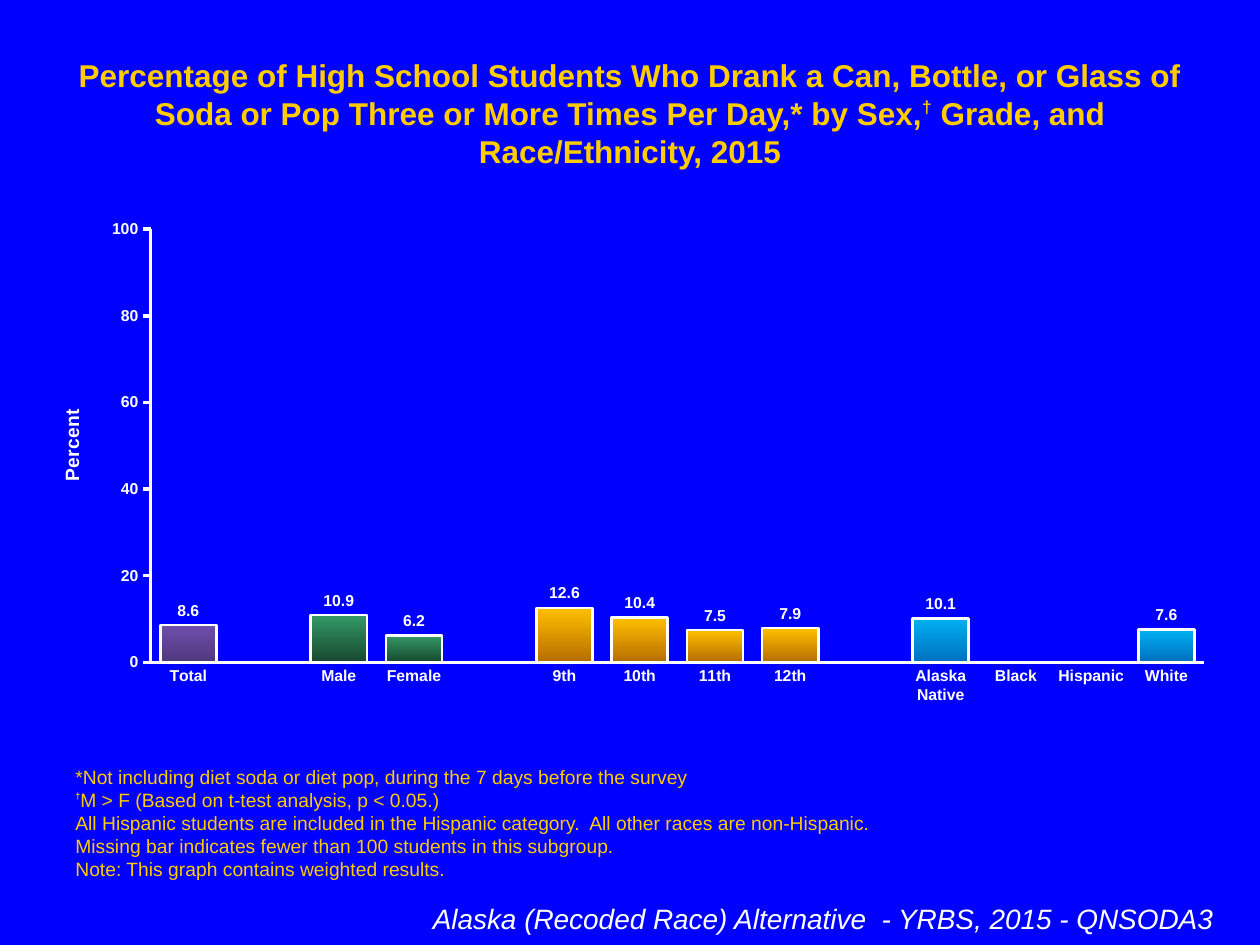
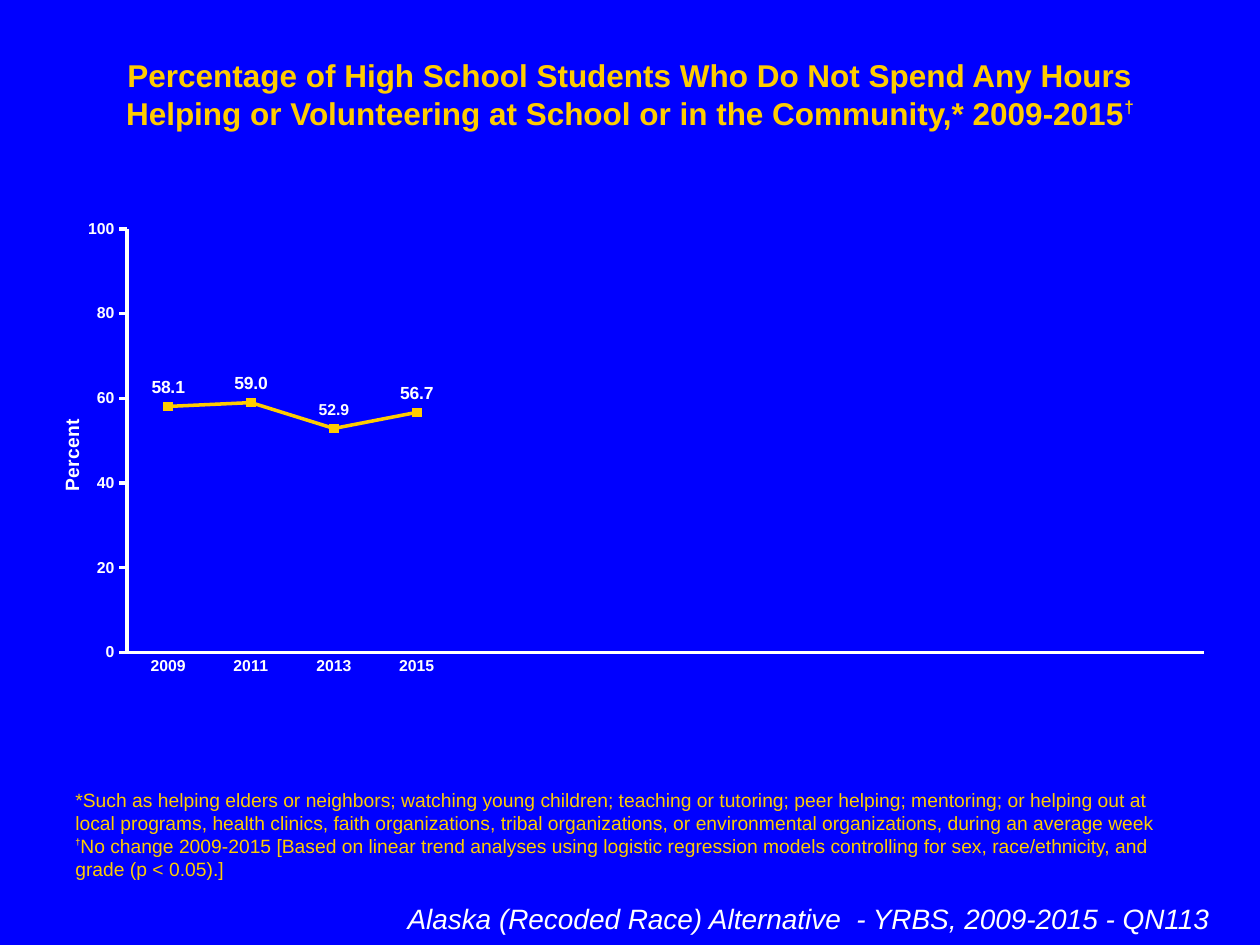
import pptx
import pptx.chart.data
import pptx.dml.color
import pptx.enum.chart
import pptx.enum.text
import pptx.oxml
import pptx.oxml.ns
import pptx.util

PX = 914400 / 126
FONT = "Arial"
BLUE, GOLD, WHITE = "0000FF", "FFCC00", "FFFFFF"
DAGGER = "†"

Align = pptx.enum.text.PP_ALIGN
Anchor = pptx.enum.text.MSO_ANCHOR
ChartType = pptx.enum.chart.XL_CHART_TYPE
Tick = pptx.enum.chart.XL_TICK_MARK
LabelPosition = pptx.enum.chart.XL_LABEL_POSITION


def px(length):
    return pptx.util.Emu(round(length * PX))


def color(value):
    return pptx.dml.color.RGBColor.from_string(value)


def set_font(font, size, fill, bold=False, italic=False):
    font.name = FONT
    font.size = pptx.util.Pt(size)
    font.bold = bold
    font.italic = italic
    font.color.rgb = color(fill)


def set_line(line, fill, width=2):
    line.color.rgb = color(fill)
    line.width = pptx.util.Pt(width)


def set_layout(parent, index, **fractions):
    """Place a chart part by fractions of the chart's size."""
    old = parent.find(pptx.oxml.ns.qn("c:layout"))
    if old is not None:
        parent.remove(old)
    inner = '<c:layoutTarget val="inner"/>' if "w" in fractions else ""
    modes = "".join(f'<c:{key}Mode val="edge"/>' for key in "xy")
    values = "".join(f'<c:{key} val="{value}"/>' for key, value in fractions.items())
    parent.insert(index, pptx.oxml.parse_xml(
        f'<c:layout {pptx.oxml.ns.nsdecls("c")}><c:manualLayout>'
        f"{inner}{modes}{values}</c:manualLayout></c:layout>"))


class SurveyDeck:
    def __init__(self):
        self.deck = pptx.Presentation()
        self.deck.slide_width, self.deck.slide_height = px(1260), px(945)
        self.page = None

    def new_page(self):
        self.page = self.deck.slides.add_slide(self.deck.slide_layouts[6])
        self.page.background.fill.solid()
        self.page.background.fill.fore_color.rgb = color(BLUE)

    def text(self, place, lines, size, fill, align=Align.LEFT, anchor=Anchor.TOP,
             bold=False, italic=False, dagger=(9, 50)):
        box = self.page.shapes.add_textbox(*map(px, place))
        frame = box.text_frame
        frame.word_wrap = True
        frame.auto_size = pptx.enum.text.MSO_AUTO_SIZE.SHAPE_TO_FIT_TEXT
        frame.vertical_anchor = anchor
        for number, line in enumerate(lines):
            para = frame.add_paragraph() if number else frame.paragraphs[0]
            para.alignment = align
            set_font(para.font, size, fill, bold, italic)
            for part in filter(None, line.partition(DAGGER)):
                span = para.add_run()
                span.text = part
                if part == DAGGER:
                    span.font.size = pptx.util.Pt(dagger[0])
                    span.font.bold = True
                    span.font._element.set("baseline", str(dagger[1] * 1000))

    def title(self, words):
        self.text((63, 50, 1134, 50), [words], 18, GOLD, Align.CENTER,
                  bold=True, dagger=(17, 40))

    def footnotes(self, lines):
        self.text((63, 851, 1134, 36), lines, 11, GOLD, anchor=Anchor.BOTTOM)

    def footer(self, left, width, words):
        self.text((left, 895, width, 47), [words], 16, WHITE, Align.RIGHT, italic=True)

    def chart(self, kind, categories, values, plot_area, title_top, label_size, label_position):
        data = pptx.chart.data.CategoryChartData(number_format="#,##0.0")
        data.categories = categories
        data.add_series("Series 1", values)
        place = map(px, (31, 209, 1197, 504))
        chart = self.page.shapes.add_chart(kind, *place, data).chart
        chart.has_legend = chart.has_title = False
        set_font(chart.font, 18, WHITE)
        set_layout(chart._chartSpace.chart.plotArea, 0, **dict(zip("xywh", plot_area)))

        # Axes
        for axis, tick in ((chart.category_axis, Tick.NONE), (chart.value_axis, Tick.OUTSIDE)):
            axis.has_major_gridlines = False
            axis.major_tick_mark, axis.minor_tick_mark = tick, Tick.NONE
            set_font(axis.tick_labels.font, 9, WHITE, bold=True)
            set_line(axis.format.line, WHITE)
        percent = chart.value_axis
        percent.minimum_scale, percent.maximum_scale, percent.major_unit = 0, 100, 20
        percent.tick_labels.number_format = "#,##0"
        percent.tick_labels.number_format_is_linked = False
        heading = percent.axis_title
        para = heading.text_frame.paragraphs[0]
        para.text = "Percent"
        set_font(para.font, 11, WHITE, bold=True)
        set_layout(heading._element, 1, x=0.02, y=title_top)

        # Value labels belong to the series, so a single point can differ
        plot = chart.plots[0]
        plot.vary_by_categories = False
        labels = plot.series[0].data_labels
        labels.show_value = True
        labels.number_format = "#,##0.0"
        labels.number_format_is_linked = False
        labels.position = label_position
        set_font(labels.font, label_size, WHITE, bold=True)
        return plot

    def bar_chart(self, groups):
        """Draw groups of bars, one empty category between groups."""
        categories, values, fills = [], [], []
        for bars, stops in groups:
            if categories:
                categories.append("")
                values.append(None)
                fills.append(None)
            categories += bars.keys()
            values += bars.values()
            fills += [stops] * len(bars)
        plot = self.chart(ChartType.COLUMN_CLUSTERED, categories, values,
                          (0.1, 0.04, 0.88, 0.86), 0.39, 9, LabelPosition.OUTSIDE_END)
        plot.gap_width, plot.overlap = 34, 100
        series = plot.series[0]
        series.format.fill.solid()
        series.format.fill.fore_color.rgb = color("26CA59")
        set_line(series.format.line, WHITE, 1.5)
        for number, stops in enumerate(fills):
            if stops:
                bar = series.points[number].format
                bar.fill.gradient()
                bar.fill.gradient_angle = 270
                for stop, shade in zip(bar.fill.gradient_stops, stops):
                    stop.color.rgb = color(shade)
                set_line(bar.line, WHITE, 1.5)

    def line_chart(self, trend, slots, small_label):
        blanks = slots - len(trend)
        plot = self.chart(ChartType.LINE_MARKERS, [*trend] + [""] * blanks,
                          [*trend.values()] + [None] * blanks,
                          (0.08, 0.04, 0.9, 0.84), 0.41, 10, LabelPosition.ABOVE)
        series = plot.series[0]
        series.smooth = False
        set_line(series.format.line, GOLD)
        series.marker.style = pptx.enum.chart.XL_MARKER_STYLE.SQUARE
        series.marker.size = 5
        series.marker.format.fill.solid()
        series.marker.format.fill.fore_color.rgb = color(GOLD)
        series.marker.format.line.color.rgb = color(GOLD)
        label = series.points[small_label].data_label
        set_font(label.font, 9, WHITE, bold=True)
        label.position = LabelPosition.ABOVE


def main():
    survey = SurveyDeck()

    # Soda by sex, grade and race/ethnicity
    survey.new_page()
    survey.title("Percentage of High School Students Who Drank a Can, Bottle, or Glass of "
                 "Soda or Pop Three or More Times Per Day,* by Sex,† Grade, and "
                 "Race/Ethnicity, 2015")
    survey.footnotes([
        "*Not including diet soda or diet pop, during the 7 days before the survey",
        "†M > F (Based on t-test analysis, p < 0.05.)",
        "All Hispanic students are included in the Hispanic category.  "
        "All other races are non-Hispanic.",
        "Missing bar indicates fewer than 100 students in this subgroup.",
        "Note: This graph contains weighted results.",
    ])
    survey.footer(116, 1110, "Alaska (Recoded Race) Alternative  - YRBS, 2015 - QNSODA3")
    survey.bar_chart([
        ({"Total": 8.6}, ("6E4EAE", "4F387C")),
        ({"Male": 10.9, "Female": 6.2}, ("339966", "18472F")),
        ({"9th": 12.6, "10th": 10.4, "11th": 7.5, "12th": 7.9}, ("FFC000", "B66D00")),
        ({"Alaska Native": 10.1, "Black": None, "Hispanic": None, "White": 7.6},
         ("00B0F0", "0070C0")),
    ])

    # Volunteering trend
    survey.new_page()
    survey.title("Percentage of High School Students Who Do Not Spend Any Hours Helping or "
                 "Volunteering at School or in the Community,* 2009-2015†")
    survey.footnotes([
        "*Such as helping elders or neighbors; watching young children; teaching or tutoring; "
        "peer helping; mentoring; or helping out at local programs, health clinics, faith "
        "organizations, tribal organizations, or environmental organizations, during an "
        "average week",
        "†No change 2009-2015 [Based on linear trend analyses using logistic regression models "
        "controlling for sex, race/ethnicity, and grade (p < 0.05).]",
    ])
    survey.footer(242, 980, "Alaska (Recoded Race) Alternative  - YRBS, 2009-2015 - QN113")
    survey.line_chart({"2009": 58.1, "2011": 59.0, "2013": 52.9, "2015": 56.7},
                      slots=13, small_label=2)

    survey.deck.save("out.pptx")


if __name__ == "__main__":
    main()
